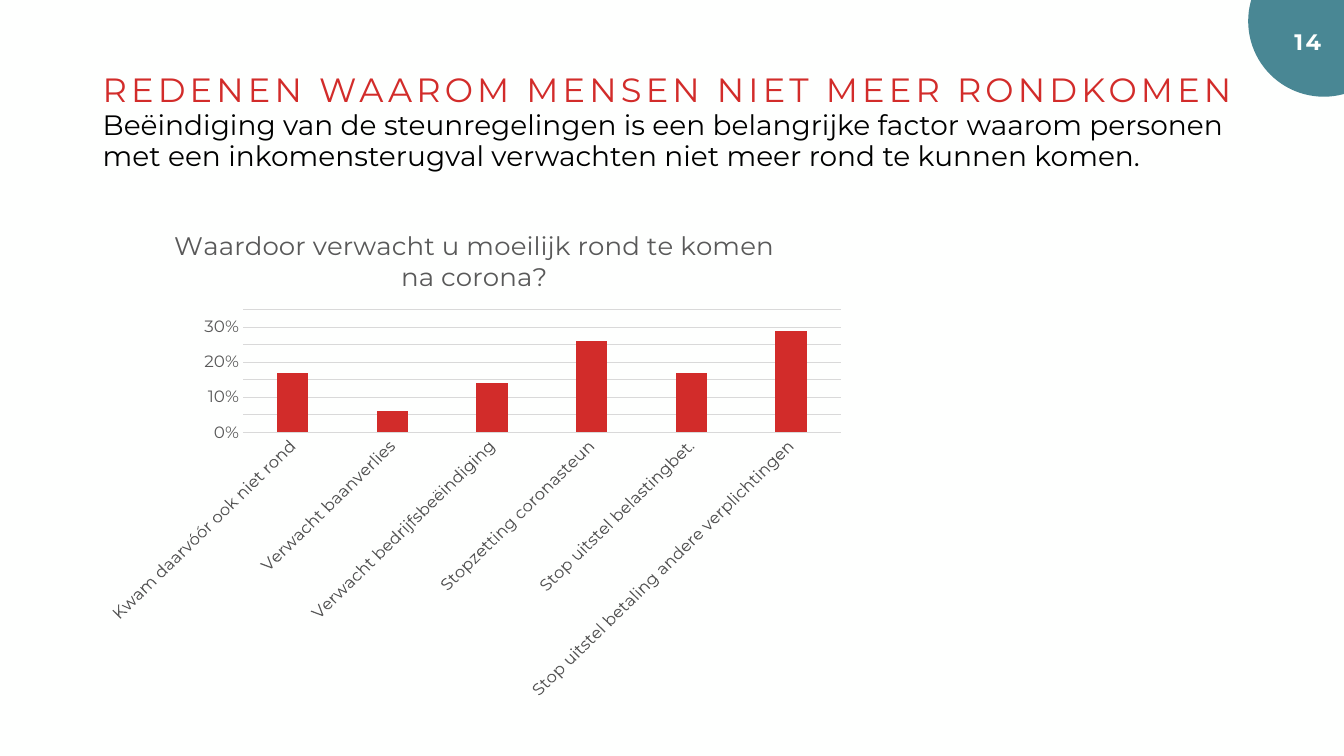
from pptx import Presentation
from pptx.chart.data import CategoryChartData
from pptx.dml.color import RGBColor
from pptx.enum.chart import XL_CHART_TYPE as ChartType, XL_TICK_MARK as TickMark
from pptx.enum.shapes import MSO_SHAPE as Preset
from pptx.enum.text import PP_ALIGN as Align
from pptx.util import Inches, Pt

COLORS = {
    "background": "FEFFFE",
    "teal": "498794",
    "red": "D22C2A",
    "black": "000000",
    "gray": "595959",
    "grid": "D9D9D9",
}
FONT = "Montserrat"
QUESTION = "Waardoor verwacht u moeilijk rond te komen na corona?"
REASONS = {
    "Kwam daarvóór ook niet rond": 0.17,
    "Verwacht baanverlies": 0.06,
    "Verwacht bedrijfsbeëindiging": 0.14,
    "Stopzetting coronasteun": 0.26,
    "Stop uitstel belastingbet.": 0.17,
    "Stop uitstel betaling andere verplichtingen": 0.29,
}


def set_font(font, size, color, bold=False):
    font.name = FONT
    font.size = Pt(size)
    font.bold = bold
    font.color.rgb = RGBColor.from_string(COLORS[color])


def add_text(box, text, size, color, bold=False, spacing=0):
    """Add a one-paragraph text box; spacing is the letter spacing in points."""
    frame = slide.shapes.add_textbox(*map(Inches, box)).text_frame
    frame.word_wrap = True
    paragraph = frame.paragraphs[0]
    paragraph.text = text
    set_font(paragraph.font, size, color, bold)
    if spacing:
        paragraph.runs[0].font._element.set("spc", str(round(spacing * 100)))
    return paragraph


presentation = Presentation()
presentation.slide_width = Inches(13.33)
presentation.slide_height = Inches(7.5)
slide = presentation.slides.add_slide(presentation.slide_layouts[6])
slide.background.fill.solid()
slide.background.fill.fore_color.rgb = RGBColor.from_string(COLORS["background"])

# Page number in the corner
circle = slide.shapes.add_shape(
    Preset.OVAL, Inches(12.38), Inches(-0.54), Inches(1.5), Inches(1.5)
)
circle.shadow.inherit = False
circle.fill.solid()
circle.fill.fore_color.rgb = RGBColor.from_string(COLORS["teal"])
circle.line.fill.background()
page_number = add_text((11.39, 0.23, 1.81, 0.37), "14", 16, "background", True, 1.8)
page_number.alignment = Align.RIGHT

# Heading and message
heading = add_text(
    (0.92, 0.68, 11.5, 0.33),
    "REDENEN WAAROM MENSEN NIET MEER RONDKOMEN", 24, "red", spacing=3,
)
message = add_text(
    (0.92, 1.06, 11.49, 0.8),
    "Beëindiging van de steunregelingen is een belangrijke factor waarom personen "
    "met een inkomensterugval verwachten niet meer rond te kunnen komen.",
    20, "black",
)
for paragraph in (heading, message):
    paragraph.line_spacing = 0.9

# Chart of reasons
chart_data = CategoryChartData(number_format="0%")
chart_data.categories = list(REASONS)
chart_data.add_series(QUESTION, list(REASONS.values()))
chart = slide.shapes.add_chart(
    ChartType.COLUMN_CLUSTERED,
    Inches(0.92), Inches(2.07), Inches(7.57), Inches(4.87), chart_data,
).chart
set_font(chart.font, 10, "black")
chart.has_legend = False
chart.has_title = True
chart_title = chart.chart_title.text_frame.paragraphs[0]
chart_title.text = QUESTION
set_font(chart_title.font, 18.6, "gray")
chart.chart_title.include_in_layout = False

plot = chart.plots[0]
plot.vary_by_categories = False
plot.gap_width = 219
plot.overlap = -27
bars = plot.series[0].format
bars.fill.solid()
bars.fill.fore_color.rgb = RGBColor.from_string(COLORS["red"])

category_axis, value_axis = chart.category_axis, chart.value_axis
for axis in (category_axis, value_axis):
    axis.major_tick_mark = axis.minor_tick_mark = TickMark.NONE
    set_font(axis.tick_labels.font, 12, "gray")
value_axis.minimum_scale = 0
value_axis.maximum_scale = 0.35
value_axis.major_unit = 0.05
value_axis.tick_labels.number_format = "0%"
value_axis.tick_labels.number_format_is_linked = False
value_axis.format.line.fill.background()
for line in (category_axis.format.line, value_axis.major_gridlines.format.line):
    line.color.rgb = RGBColor.from_string(COLORS["grid"])
    line.width = Pt(0.75)

# Slant the category labels by 45 degrees
label_body = category_axis._element.txPr.bodyPr
label_body.set("rot", str(-45 * 60000))
label_body.set("vert", "horz")

presentation.save("out.pptx")
